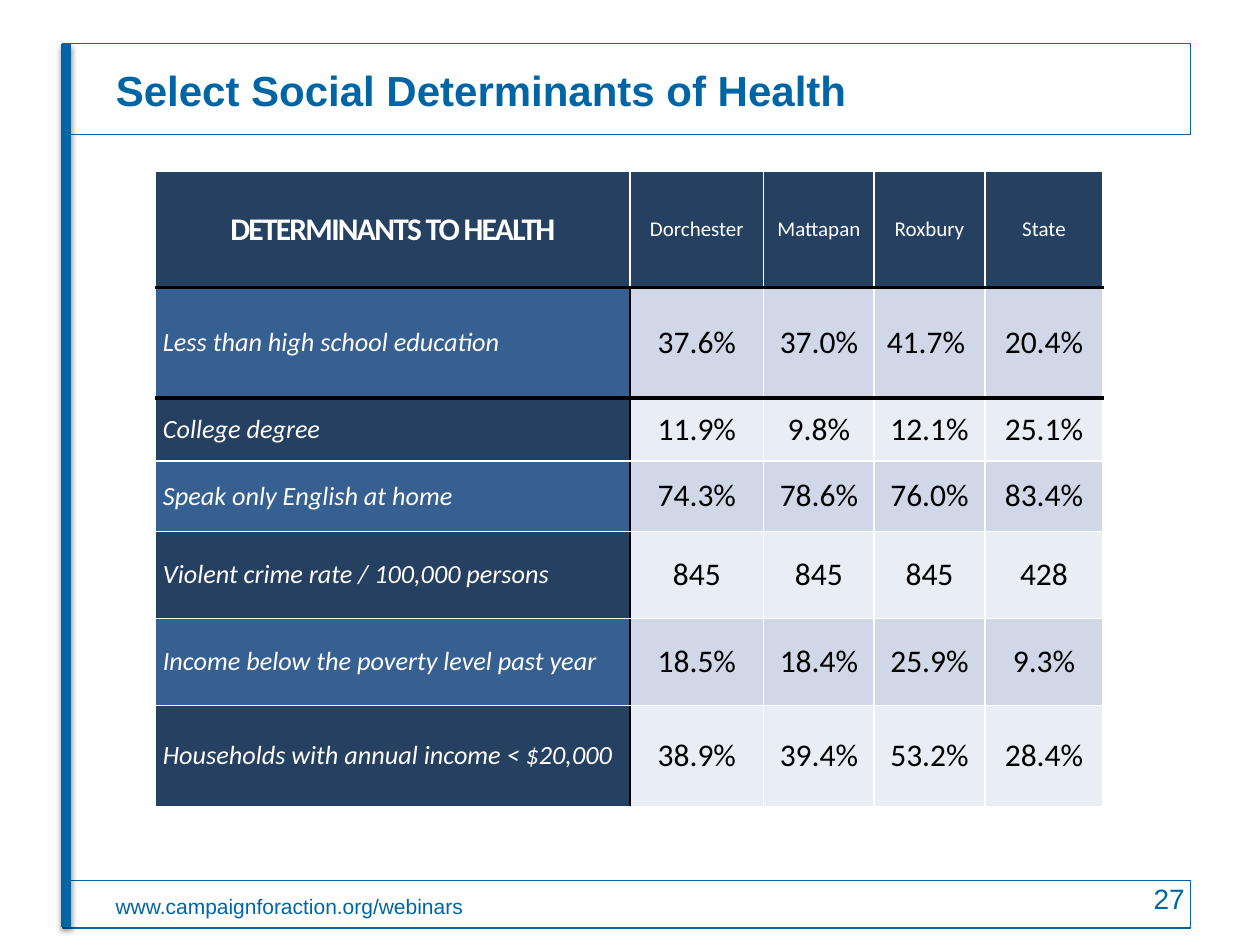
import pptx
import pptx.dml.color
import pptx.enum.shapes
import pptx.enum.text
import pptx.oxml
import pptx.oxml.ns
import pptx.util
from lxml import etree

Pt = pptx.util.Pt
ALIGN = pptx.enum.text.PP_ALIGN
ANCHOR = pptx.enum.text.MSO_ANCHOR

# Content
TITLE = "Select Social Determinants of Health"
FOOTER = "www.campaignforaction.org/webinars"
PAGE_NUMBER = "27"
ROWS = [
    ("DETERMINANTS TO HEALTH", "Dorchester", "Mattapan", "Roxbury", "State"),
    ("Less than high school education", "37.6%", "37.0%", "41.7% ", "20.4%"),
    ("College degree", "11.9%", "9.8%", "12.1%", "25.1%"),
    ("Speak only English at home", "74.3%", "78.6%", "76.0%", "83.4%"),
    ("Violent crime rate / 100,000 persons", "845", "845", "845", "428"),
    ("Income below the poverty level past year", "18.5%", "18.4%", "25.9%", "9.3%"),
    ("Households with annual income < $20,000", "38.9%", "39.4%", "53.2%", "28.4%"),
]
COLUMN_WIDTHS = [271.3, 76.3, 63.2, 63.2, 67.7]
ROW_HEIGHTS = [66.2, 63.2, 36, 40.3, 49.7, 49.7, 58]

# Colours
BLUE, WHITE, BLACK = "0065A4", "FFFFFF", "000000"
NAVY, STEEL = "254061", "376092"
BAND_DARK, BAND_LIGHT = "D0D8E8", "E9EDF4"


def color(value):
    return pptx.dml.color.RGBColor.from_string(value)


def write(frame, text, size=18, font="Arial", ink=BLUE, bold=False, italic=False,
          align=ALIGN.LEFT, anchor=ANCHOR.TOP, spacing=0):
    frame.word_wrap = True
    frame.vertical_anchor = anchor
    para = frame.paragraphs[0]
    para.alignment = align
    span = para.add_run()
    span.text = text
    span.font.size, span.font.name = Pt(size), font
    span.font.bold, span.font.italic = bold, italic
    span.font.color.rgb = color(ink)
    if spacing:
        span.font._element.set("spc", str(spacing * 100))


def add_frame(page, left, top, width, height, fill=None):
    box = page.shapes.add_shape(pptx.enum.shapes.MSO_SHAPE.RECTANGLE,
                                Pt(left), Pt(top), Pt(width), Pt(height))
    box.shadow.inherit = False
    if fill:
        box.fill.solid()
        box.fill.fore_color.rgb = color(fill)
    else:
        box.fill.background()
    box.line.color.rgb = color(BLUE)
    box.line.width = Pt(0.75)


def add_text(page, left, top, width, height, text, **style):
    box = page.shapes.add_textbox(Pt(left), Pt(top), Pt(width), Pt(height))
    write(box.text_frame, text, **style)


def set_border(cell, side, ink, width):
    cell._tc.get_or_add_tcPr().append(pptx.oxml.parse_xml(
        f'<a:ln{side} {pptx.oxml.ns.nsdecls("a")} w="{Pt(width)}">'
        f'<a:solidFill><a:srgbClr val="{ink}"/></a:solidFill></a:ln{side}>'))


def cell_style(row, column):
    """Return the fill and the text format of a table cell."""
    style = {"font": "Calibri", "anchor": ANCHOR.MIDDLE, "ink": WHITE, "align": ALIGN.CENTER}
    if row == 0:
        heading = {"size": 18, "bold": True, "spacing": -1} if column == 0 else {"size": 12}
        return NAVY, {**style, **heading}
    if column == 0:
        label = {"size": 15, "italic": True, "align": ALIGN.LEFT}
        return (STEEL if row % 2 else NAVY), {**style, **label}
    return (BAND_DARK if row % 2 else BAND_LIGHT), {**style, "ink": BLACK}


def cell_borders(row, column):
    """Heavy rules go under the first two rows; a black rule follows the labels."""
    rule, thin = (BLACK, 2.25), (WHITE, 1)
    return {
        "L": (BLACK, 1) if row and column == 1 else thin,
        "R": (BLACK, 1) if row and column == 0 else thin,
        "T": rule if row in (1, 2) else thin,
        "B": rule if row in (0, 1) else thin,
    }


def add_determinants_table(page):
    table = page.shapes.add_table(len(ROWS), len(COLUMN_WIDTHS), Pt(88.8), Pt(98),
                                  Pt(sum(COLUMN_WIDTHS)), Pt(sum(ROW_HEIGHTS))).table
    table.first_row = table.horz_banding = False
    for column, width in zip(table.columns, COLUMN_WIDTHS):
        column.width = Pt(width)
    for row, height in zip(table.rows, ROW_HEIGHTS):
        row.height = Pt(height)
    for r, texts in enumerate(ROWS):
        for c, text in enumerate(texts):
            cell = table.cell(r, c)
            cell.margin_left = cell.margin_right = Pt(4.3)
            cell.margin_top = cell.margin_bottom = 0
            fill, style = cell_style(r, c)
            anchor = style.pop("anchor")
            write(cell.text_frame, text, **style)
            cell.vertical_anchor = anchor
            for side, (ink, width) in cell_borders(r, c).items():
                set_border(cell, side, ink, width)
            cell.fill.solid()
            cell.fill.fore_color.rgb = color(fill)


def add_side_bar(page):
    bar = page.shapes.add_connector(pptx.enum.shapes.MSO_CONNECTOR.STRAIGHT,
                                    Pt(37.8), Pt(25.2), Pt(37.8), Pt(530))
    bar.line.color.rgb = color(BLUE)
    bar.line.width = Pt(6)
    qn = pptx.oxml.ns.qn
    effects = etree.SubElement(bar._element.spPr, qn("a:effectLst"))
    shadow = etree.SubElement(effects, qn("a:outerShdw"), blurRad=str(Pt(3.1)),
                              dist=str(Pt(1.6)), dir="5400000", rotWithShape="0")
    ink = etree.SubElement(shadow, qn("a:srgbClr"), val=BLACK)
    etree.SubElement(ink, qn("a:alpha"), val="38000")


def main():
    deck = pptx.Presentation()
    deck.slide_width, deck.slide_height = Pt(720), Pt(540)
    page = deck.slides.add_slide(deck.slide_layouts[5])

    # Frames and footer
    add_frame(page, 36, 503.3, 644.4, 27, fill=WHITE)
    add_frame(page, 36, 25, 644.4, 51.8)
    add_side_bar(page)
    add_text(page, 59, 507, 616.3, 21.8, FOOTER, size=12)

    add_determinants_table(page)
    add_text(page, 516.2, 500.4, 167.8, 28.8, PAGE_NUMBER, size=16, align=ALIGN.RIGHT)

    # Title
    title = page.shapes.title
    title.left, title.top, title.width, title.height = Pt(59), Pt(25.2), Pt(625), Pt(51.8)
    write(title.text_frame, TITLE, size=24, bold=True, anchor=ANCHOR.MIDDLE)

    deck.save("out.pptx")


if __name__ == "__main__":
    main()
